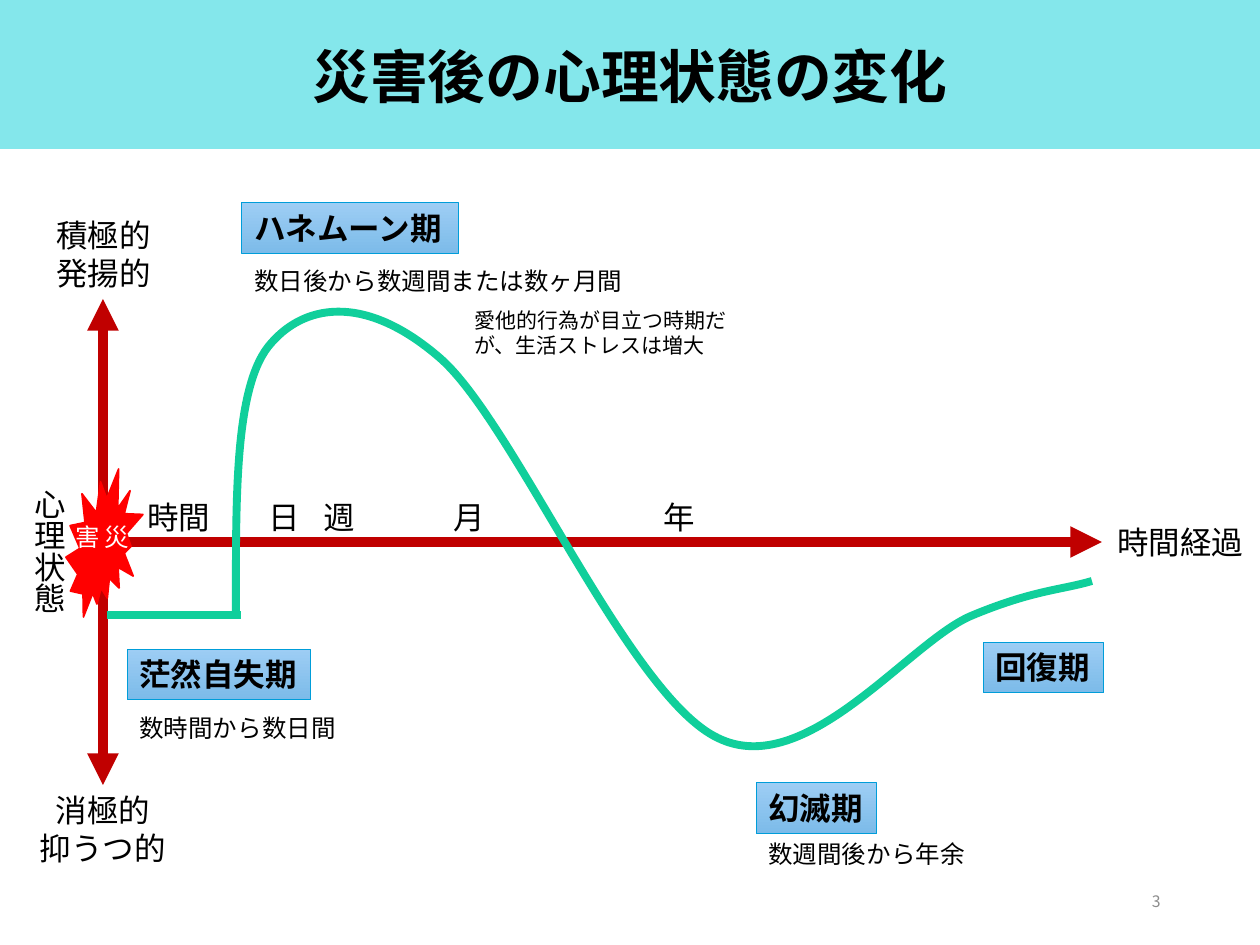
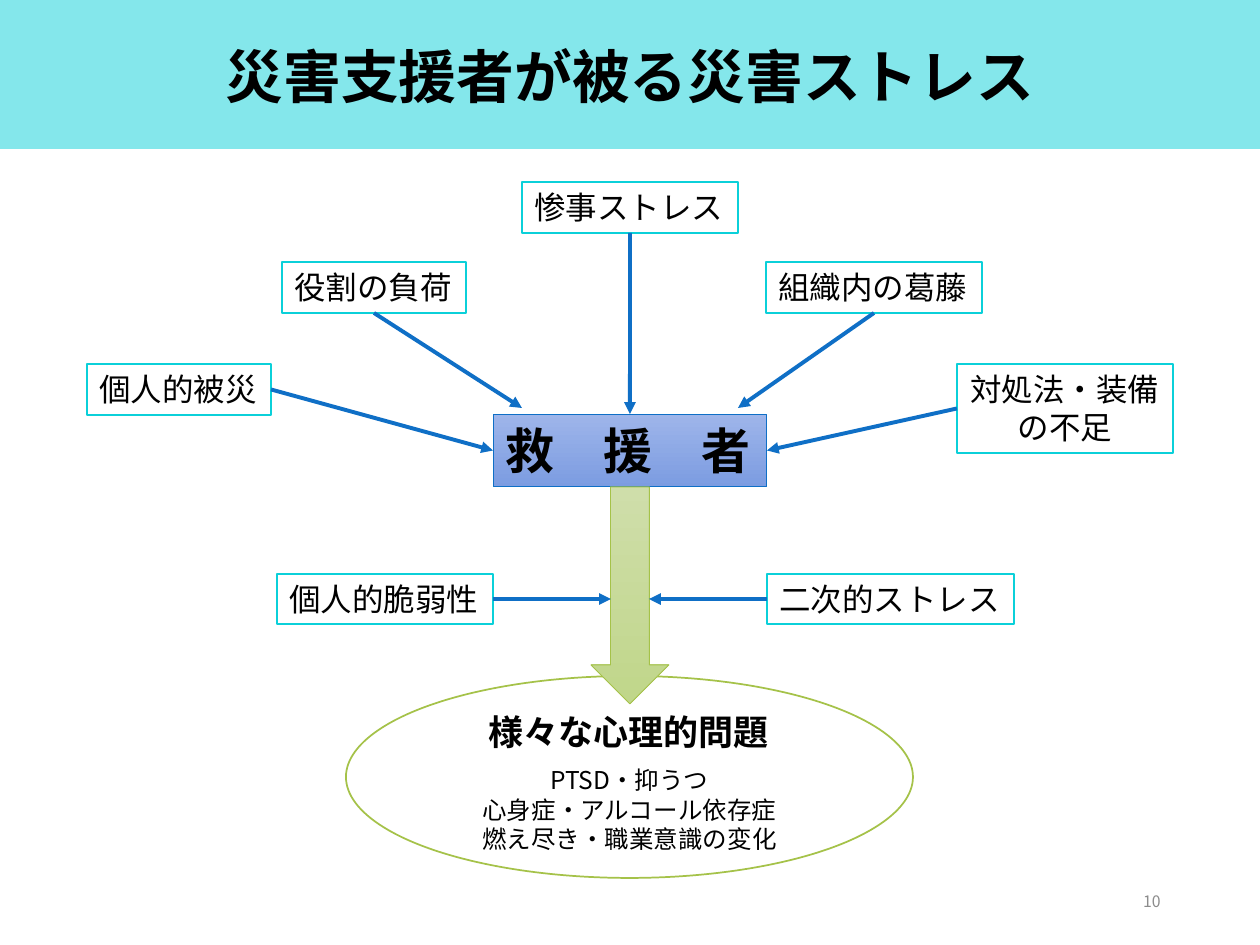
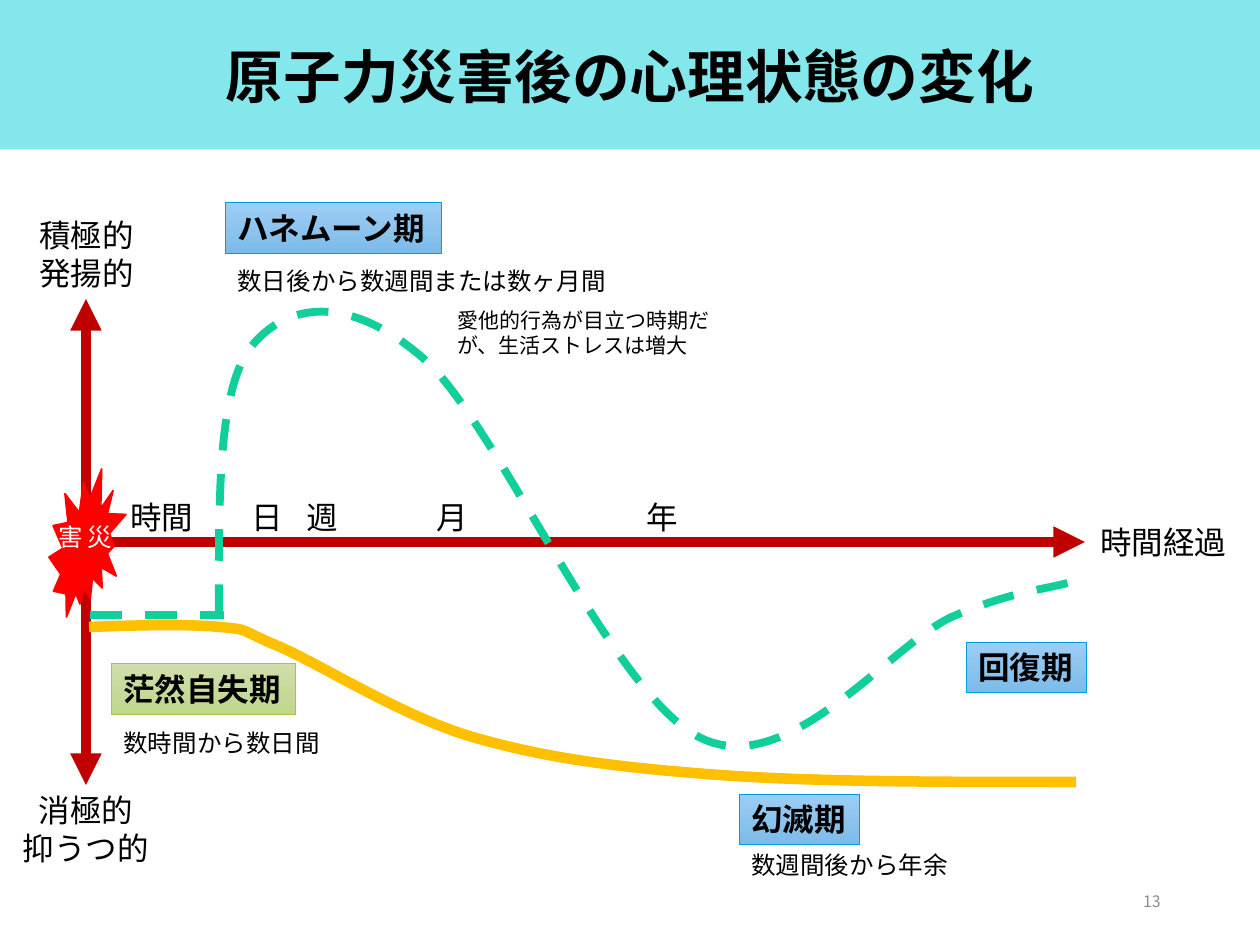
from lxml import etree
from pptx import Presentation
from pptx.dml.color import RGBColor
from pptx.enum import dml, shapes, text
from pptx.oxml import ns
from pptx.util import Pt

PX = 914400 / 126
FONT = "Noto Sans CJK JP"
BLACK, WHITE, GREY = "000000", "FFFFFF", "8C8C8C"
CYAN, BLUE, GREEN = "0BD0D9", "0F6FC6", "A5C249"
AXIS, DISASTER, MOOD, NUCLEAR = "C00000", "FF0000", "10CF9B", "FFC000"
SKY_FADE = ("9DCDF4", "7CBBE9", "009DD9")
LEAF_FADE = ("CFDEAA", "C0D68A", GREEN)
NAVY_FADE = ("9EB5EA", "7C9CE1", BLUE)
LEFT, CENTER, RIGHT = text.PP_ALIGN.LEFT, text.PP_ALIGN.CENTER, text.PP_ALIGN.RIGHT
TOP, MIDDLE = text.MSO_ANCHOR.TOP, text.MSO_ANCHOR.MIDDLE
KIND = shapes.MSO_SHAPE

MOOD_CURVE = [
    (133, 74), (133, -38), (131, -151), (165, -195), (199, -238), (261, -250),
    (337, -184), (411, -120), (526, 154), (615, 196), (703, 239), (805, 101),
    (868, 74), (930, 48), (959, 48), (989, 39)]
NUCLEAR_CURVE = [
    (3, 85), (54, 83), (103, 82), (134, 85), (166, 88), (151, 87),
    (192, 104), (234, 122), (312, 172), (383, 194), (455, 215), (519, 224),
    (620, 232), (720, 240), (855, 240), (990, 240)]
AXIS_LABELS = [
    (["積極的", "発揚的"], -60, -332, 121, 89, CENTER),
    (["消極的", "抑うつ的"], -76, 243, 152, 89, CENTER),
    (["時間"], 32, -50, 89, 50, LEFT),
    (["日"], 153, -50, 57, 50, LEFT),
    (["週"], 208, -50, 57, 50, LEFT),
    (["月"], 338, -50, 57, 50, LEFT),
    (["年"], 548, -50, 57, 50, LEFT),
    (["時間経過"], 1002, -25, 152, 50, LEFT)]
STRESSES = [
    (["惨事ストレス"], -108, -232, 216, 51, 2, 0, None),
    (["対処法・装備", "の不足"], 327, -50, 216, 89, 1, 3, None),
    (["個人的脆弱性"], -353, 160, 216, 50, 3, None, (-19, 185)),
    (["二次的ストレス"], 137, 160, 247, 50, 1, None, (19, 185)),
    (["役割の負荷"], -348, -152, 184, 51, 2, None, (-108, -6)),
    (["個人的被災"], -543, -50, 184, 51, 3, 1, None),
    (["組織内の葛藤"], 136, -152, 216, 51, 2, None, (108, -6))]


def px(*lengths):
    """Turn pixel lengths into EMU."""
    return [round(length * PX) for length in lengths]


def rgb(colour):
    """Turn a hex string into a colour."""
    return RGBColor.from_string(colour)


def write(shape, lines, size, colour=BLACK, bold=False, align=LEFT, anchor=TOP,
          fit=True, spacing=None, vertical=False):
    """Fill a shape with one paragraph per line."""
    frame = shape.text_frame
    frame.word_wrap = not fit
    frame.auto_size = (text.MSO_AUTO_SIZE.SHAPE_TO_FIT_TEXT if fit
                       else text.MSO_AUTO_SIZE.NONE)
    frame.vertical_anchor = anchor
    if vertical:
        frame._txBody.bodyPr.set("vert", "eaVert")
    for index, line in enumerate(lines):
        paragraph = frame.add_paragraph() if index else frame.paragraphs[0]
        paragraph.alignment = align
        paragraph.line_spacing = spacing
        run = paragraph.add_run()
        run.text = line
        run.font.name, run.font.size, run.font.bold = FONT, Pt(size), bold
        run.font.color.rgb = rgb(colour)
        etree.SubElement(run.font._element, ns.qn("a:ea"), typeface=FONT)


def label(slide, lines, box, size, **style):
    """Add a text box."""
    caption = slide.shapes.add_textbox(*px(*box))
    write(caption, lines, size, **style)
    return caption


def outline(line, colour, width):
    """Set a line's colour and width."""
    line.color.rgb = rgb(colour)
    line.width = Pt(width)


def block(slide, kind, box, fill, border=None, width=1):
    """Add a flat preset shape with a plain fill."""
    shape = slide.shapes.add_shape(kind, *px(*box))
    shape.shadow.inherit = False
    shape.fill.solid()
    shape.fill.fore_color.rgb = rgb(fill)
    if border:
        outline(shape.line, border, width)
    else:
        shape.line.fill.background()
    return shape


def faded(slide, kind, box, fade):
    """Add a preset shape that darkens downwards."""
    upper, lower, border = fade
    shape = block(slide, kind, box, upper, border, 0.5)
    shape.fill.gradient()
    shape.fill.gradient_angle = 270
    for stop, colour in zip(shape.fill.gradient_stops, (upper, lower)):
        stop.color.rgb = rgb(colour)
    return shape


def connect(slide, start, end, colour, width, head=False, tail=False):
    """Add a straight line with optional arrowheads."""
    line = slide.shapes.add_connector(shapes.MSO_CONNECTOR.STRAIGHT, *px(*start, *end))
    outline(line.line, colour, width)
    for tag, wanted in (("a:headEnd", head), ("a:tailEnd", tail)):
        if wanted:
            etree.SubElement(line.line._get_or_add_ln(), ns.qn(tag), type="triangle")
    etree.SubElement(line._element.spPr, ns.qn("a:effectLst"))
    return line


def extent(controls, steps=50):
    """Find the least and greatest coordinate of a chain of cubics on one axis."""
    values = [controls[0]]
    for first in range(0, len(controls) - 1, 3):
        a, b, c, d = controls[first:first + 4]
        for step in range(1, steps + 1):
            t = step / steps
            s = 1 - t
            values.append(a * s ** 3 + 3 * b * t * s * s + 3 * c * t * t * s + d * t ** 3)
    return min(values), max(values)


def curve(slide, left, top, controls, colour, width):
    """Draw an open chain of cubic curves."""
    (near_x, far_x), (near_y, far_y) = map(extent, zip(*controls))
    builder = slide.shapes.build_freeform(*px(left + near_x, top + near_y))
    builder.add_line_segments([px(left + far_x, top + far_y)], close=False)
    course = builder.convert_to_shape()
    course.shadow.inherit = False
    course.fill.background()
    outline(course.line, colour, width)
    trace = course._element.spPr.find(".//" + ns.qn("a:path"))
    for straight in list(trace):
        trace.remove(straight)
    stroke = etree.SubElement(trace, ns.qn("a:moveTo"))
    for index, (x, y) in enumerate(controls):
        if index % 3 == 1:
            stroke = etree.SubElement(trace, ns.qn("a:cubicBezTo"))
        local_x, local_y = px(x - near_x, y - near_y)
        etree.SubElement(stroke, ns.qn("a:pt"), x=str(local_x), y=str(local_y))
    return course


def title_band(deck, slide):
    """Draw the title band and move it to the shared layout."""
    band = block(slide, KIND.RECTANGLE, (0, 0, 1260, 149), CYAN)
    tint = band.fill._xPr.find(".//" + ns.qn("a:srgbClr"))
    etree.SubElement(tint, ns.qn("a:alpha"), val="50000")
    deck.slide_layouts[6].shapes._spTree.append(band._element)


def page(deck, title, number):
    """Add a slide with its title and page number."""
    slide = deck.slides.add_slide(deck.slide_layouts[6])
    if len(deck.slides) == 1:
        title_band(deck, slide)
    label(slide, [title], (87, 26, 1086, 107), 33, bold=True, align=CENTER,
          anchor=MIDDLE, fit=False, spacing=0.9)
    label(slide, [str(number)], (889, 876, 284, 50), 9, colour=GREY, align=RIGHT,
          anchor=MIDDLE, fit=False)
    return slide


def axes(slide, left, top):
    """Draw the mood and time axes around their crossing."""
    connect(slide, (left, top - 243), (left, top + 243), AXIS, 6, head=True, tail=True)
    connect(slide, (left, top), (left + 999, top), AXIS, 6, tail=True)
    for lines, x, y, width, height, align in AXIS_LABELS:
        label(slide, lines, (left + x, top + y, width, height), 18, align=align)
    burst = block(slide, KIND.EXPLOSION2, (left - 37, top - 73, 77, 148),
                  DISASTER, DISASTER)
    write(burst, ["災害"], 14, colour=WHITE, align=CENTER, anchor=MIDDLE,
          fit=False, vertical=True)


def mood_line(slide, left, top, dashed):
    """Draw the course of mood after a disaster as one group."""
    course = slide.shapes.add_group_shape()
    strokes = (
        connect(course, (left + 4, top + 73), (left + 138, top + 73), MOOD, 4.5),
        curve(course, left, top, MOOD_CURVE, MOOD, 4.5))
    if dashed:
        for stroke in strokes:
            stroke.line.dash_style = dml.MSO_LINE.DASH


def phase(slide, left, top, name, width, fade=SKY_FADE, period=None, gap=0, span=0):
    """Name a phase, with its period below."""
    tag = faded(slide, KIND.RECTANGLE, (left, top, width, 51), fade)
    write(tag, [name], 18, bold=True)
    if period:
        label(slide, [period], (left, top + gap, span, 43), 14)


def mood_chart(slide, left, top, nuclear=False):
    """Draw the phases of mood around the crossing of the axes."""
    axes(slide, left, top)
    mood_line(slide, left, top, dashed=nuclear)
    if nuclear:
        curve(slide, left, top, NUCLEAR_CURVE, NUCLEAR, 6)
    else:
        label(slide, ["心理状態"], (left - 92, top - 66, 63, 140), 18, vertical=True)
    phase(slide, left + (25 if nuclear else 24), top + (122 if nuclear else 107),
          "茫然自失期", 184, LEAF_FADE if nuclear else SKY_FADE,
          "数時間から数日間", 58, 223)
    phase(slide, left + 139, top - 339, "ハネムーン期", 217,
          period="数日後から数週間または数ヶ月間", gap=57, span=411)
    phase(slide, left + 653, top + (252 if nuclear else 241), "幻滅期", 121,
          period="数週間後から年余", gap=50, span=223)
    phase(slide, left + 880, top + 100, "回復期", 121)
    altruism = label(slide, ["愛他的行為が目立つ時期だが、生活ストレスは増大"],
                     (left + 359, top - 241, 281, 63), 12)
    altruism.text_frame.word_wrap = True


def outcome(slide, center, top):
    """Draw the resulting problems and the arrow that leads to them."""
    block(slide, KIND.OVAL, (center - 284, top + 189, 567, 202), WHITE, GREEN)
    label(slide, ["様々な心理的問題"], (center - 154, top + 217, 309, 55), 20, bold=True)
    label(slide, ["PTSD・抑うつ", "心身症・アルコール依存症", "燃え尽き・職業意識の変化"],
          (center - 162, top + 272, 323, 102), 14, align=CENTER)
    faded(slide, KIND.DOWN_ARROW, (center - 39, top, 78, 217), LEAF_FADE)


def stress_map(slide, center, top):
    """Draw the stresses that bear on the rescuer."""
    rescuer = faded(slide, KIND.RECTANGLE, (center - 137, top, 274, 73), NAVY_FADE)
    write(rescuer, ["救　援　者"], 28, bold=True)
    outcome(slide, center, top + 73)
    for lines, x, y, width, height, start_site, end_site, target in STRESSES:
        stress = block(slide, KIND.RECTANGLE, (center + x, top + y, width, height),
                       WHITE, CYAN)
        write(stress, lines, 18, align=CENTER if len(lines) > 1 else LEFT)
        end_x, end_y = target or (0, 0)
        arrow = connect(slide, (center + x, top + y), (center + end_x, top + end_y),
                        BLUE, 2.25, tail=True)
        arrow.begin_connect(stress, start_site)
        if target is None:
            arrow.end_connect(rescuer, end_site)


def main():
    """Build the deck."""
    deck = Presentation()
    deck.slide_width, deck.slide_height = px(1260, 945)
    mood_chart(page(deck, "災害後の心理状態の変化", 3), 103, 542)
    stress_map(page(deck, "災害支援者が被る災害ストレス", 10), 630, 414)
    mood_chart(page(deck, "原子力災害後の心理状態の変化", 13), 86, 542, nuclear=True)
    deck.save("out.pptx")


if __name__ == "__main__":
    main()
